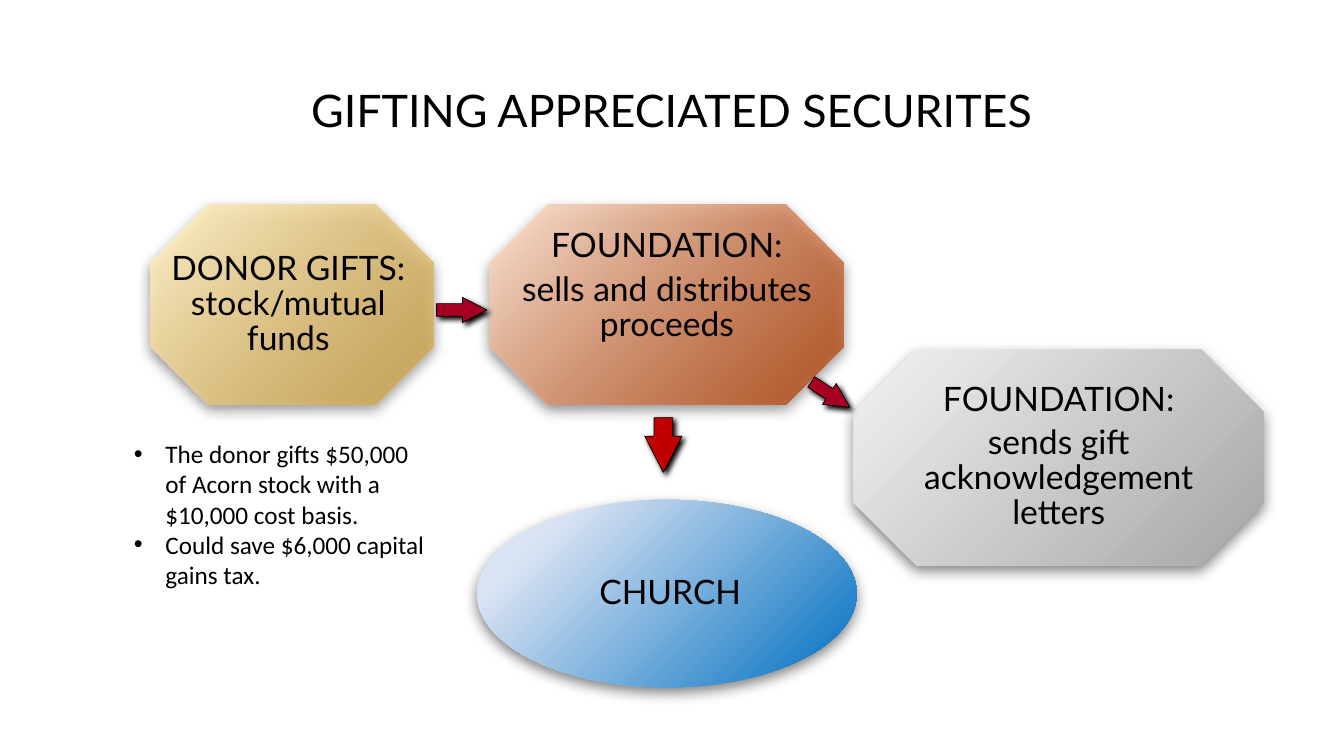
from pptx import Presentation
from pptx.dml.color import RGBColor
from pptx.enum.shapes import MSO_SHAPE
from pptx.enum.text import MSO_ANCHOR, MSO_AUTO_SIZE, PP_ALIGN
from pptx.oxml.xmlchemy import OxmlElement
from pptx.util import Pt

BLACK = RGBColor(0x00, 0x00, 0x00)
CREAM = RGBColor(0xFF, 0xF2, 0xCC)
GOLD = RGBColor(0xD1, 0xA2, 0x40)
PEACH = RGBColor(0xFB, 0xE5, 0xD6)
RUST = RGBColor(0xB6, 0x3D, 0x00)
PALE_GRAY = RGBColor(0xF2, 0xF2, 0xF2)
GRAY = RGBColor(0xA6, 0xA6, 0xA6)
PALE_BLUE = RGBColor(0xDA, 0xE3, 0xF3)
BLUE = RGBColor(0x00, 0x70, 0xC0)
CRIMSON = RGBColor(0xA5, 0x00, 0x21)
RED = RGBColor(0xC0, 0x00, 0x00)


def apply(target, values):
    for name, value in values.items():
        setattr(target, name, value)


def add_element(parent, tag, **attributes):
    element = OxmlElement(tag)
    for name, value in attributes.items():
        element.set(name, str(value))
    parent.append(element)
    return element


class FlowSlide:
    heading_font = {"name": "Lato", "size": Pt(24)}
    title_font = {"name": "Lato", "size": Pt(32), "bold": False}
    bullet_font = {"name": "Calibri", "size": Pt(18)}
    node_frame = {"margin_left": 0, "margin_top": 0, "margin_right": 0,
                  "margin_bottom": 0, "word_wrap": False,
                  "vertical_anchor": MSO_ANCHOR.MIDDLE}
    node_para = {"alignment": PP_ALIGN.CENTER, "line_spacing": Pt(25)}
    node_shadow = {"opacity": 50, "blur": 10, "distance": 4, "angle": 90}
    arrow_shadow = {"opacity": 100, "blur": 4, "distance": 3, "angle": 45}

    def __init__(self, deck):
        self.slide = deck.slides.add_slide(deck.slide_layouts[5])

    def add_text(self, para, text, font):
        span = para.add_run()
        span.text = text
        apply(span.font, font)
        span.font.color.rgb = BLACK

    def shape(self, kind, place, shadow):
        shape = self.slide.shapes.add_shape(kind, *map(Pt, place))
        shape.shadow.inherit = False
        effects = shape._element.spPr.xpath("./a:effectLst")[0]
        outer = add_element(effects, "a:outerShdw", blurRad=Pt(shadow["blur"]),
                            dist=Pt(shadow["distance"]),
                            dir=shadow["angle"] * 60000, rotWithShape=0)
        color = add_element(outer, "a:srgbClr", val=BLACK)
        add_element(color, "a:alpha", val=shadow["opacity"] * 1000)
        return shape

    def title(self, text, place):
        box = self.slide.shapes.title
        apply(box, dict(zip(("left", "top", "width", "height"), map(Pt, place))))
        apply(box.text_frame, {"vertical_anchor": MSO_ANCHOR.MIDDLE,
                               "word_wrap": True,
                               "auto_size": MSO_AUTO_SIZE.NONE})
        para = box.text_frame.paragraphs[0]
        para.alignment = PP_ALIGN.CENTER
        self.add_text(para, text, self.title_font)

    def node(self, kind, place, colors, lines, stops=(0, 1), opacity=100,
             heading_gap=0, **margins):
        """Add a gradient shape with one centred paragraph per line."""
        box = self.shape(kind, place, self.node_shadow)
        if kind == MSO_SHAPE.OCTAGON:
            box.adjustments[0] = 0.29
        box.line.fill.background()
        box.fill.gradient()
        box.fill.gradient_angle = 315
        for stop, color, position in zip(box.fill.gradient_stops, colors, stops):
            stop.color.rgb = color
            stop.position = position
        if opacity < 100:
            end_color = box._element.spPr.xpath("./a:gradFill//a:srgbClr")[-1]
            add_element(end_color, "a:alpha", val=opacity * 1000)
        frame = box.text_frame
        apply(frame, self.node_frame | margins)
        for index, line in enumerate(lines):
            para = frame.add_paragraph() if index else frame.paragraphs[0]
            apply(para, self.node_para)
            if index == 0 and heading_gap:
                para.space_after = Pt(heading_gap)
            self.add_text(para, line, self.heading_font)

    def arrow(self, place, color, rotation=0):
        arrow = self.shape(MSO_SHAPE.RIGHT_ARROW, place, self.arrow_shadow)
        arrow.adjustments[1] = 0.97
        arrow.rotation = rotation
        arrow.fill.solid()
        arrow.fill.fore_color.rgb = color
        arrow.line.color.rgb = BLACK
        arrow.line.width = Pt(0.5)

    def bullets(self, place, items):
        frame = self.slide.shapes.add_textbox(*map(Pt, place)).text_frame
        frame.word_wrap = True
        for index, item in enumerate(items):
            para = frame.add_paragraph() if index else frame.paragraphs[0]
            self.add_text(para, item, self.bullet_font)
            properties = para._p.get_or_add_pPr()
            properties.set("marL", str(Pt(22.5)))
            properties.set("indent", str(Pt(-22.5)))
            add_element(properties, "a:buFont", typeface="Arial")
            add_element(properties, "a:buChar", char="•")


def main():
    deck = Presentation()
    deck.slide_width, deck.slide_height = Pt(960), Pt(540)
    page = FlowSlide(deck)
    page.title("GIFTING APPRECIATED SECURITES", (120, 55.5, 720, 46))
    page.node(MSO_SHAPE.OCTAGON, (107.3, 146.2, 202.3, 142.6), (CREAM, GOLD),
              ("DONOR GIFTS:", "stock/mutual", "funds"), opacity=75,
              margin_right=Pt(5))
    page.node(MSO_SHAPE.OCTAGON, (350, 146.2, 252.7, 142.6), (PEACH, RUST),
              ("FOUNDATION:", "sells and distributes", "proceeds"),
              opacity=75, heading_gap=6, margin_bottom=Pt(26))
    page.node(MSO_SHAPE.OCTAGON, (609.8, 249.8, 293, 154), (PALE_GRAY, GRAY),
              ("FOUNDATION:", "sends gift", "acknowledgement", "letters"),
              heading_gap=6)
    page.node(MSO_SHAPE.OVAL, (340.6, 357, 271.4, 134), (PALE_BLUE, BLUE),
              ("CHURCH",), stops=(0.18, 0.99), margin_left=Pt(5))
    page.arrow((311.8, 212.4, 36, 18), CRIMSON)
    page.arrow((576.7, 272.9, 33, 18), CRIMSON, rotation=33.4)
    page.arrow((454.3, 304.6, 39, 26.6), RED, rotation=90)
    page.bullets((88.6, 309.6, 223.2, 116.6), (
        "The donor gifts $50,000 of Acorn stock with a $10,000 cost basis.",
        "Could save $6,000 capital gains tax."))
    deck.save("out.pptx")


if __name__ == "__main__":
    main()
